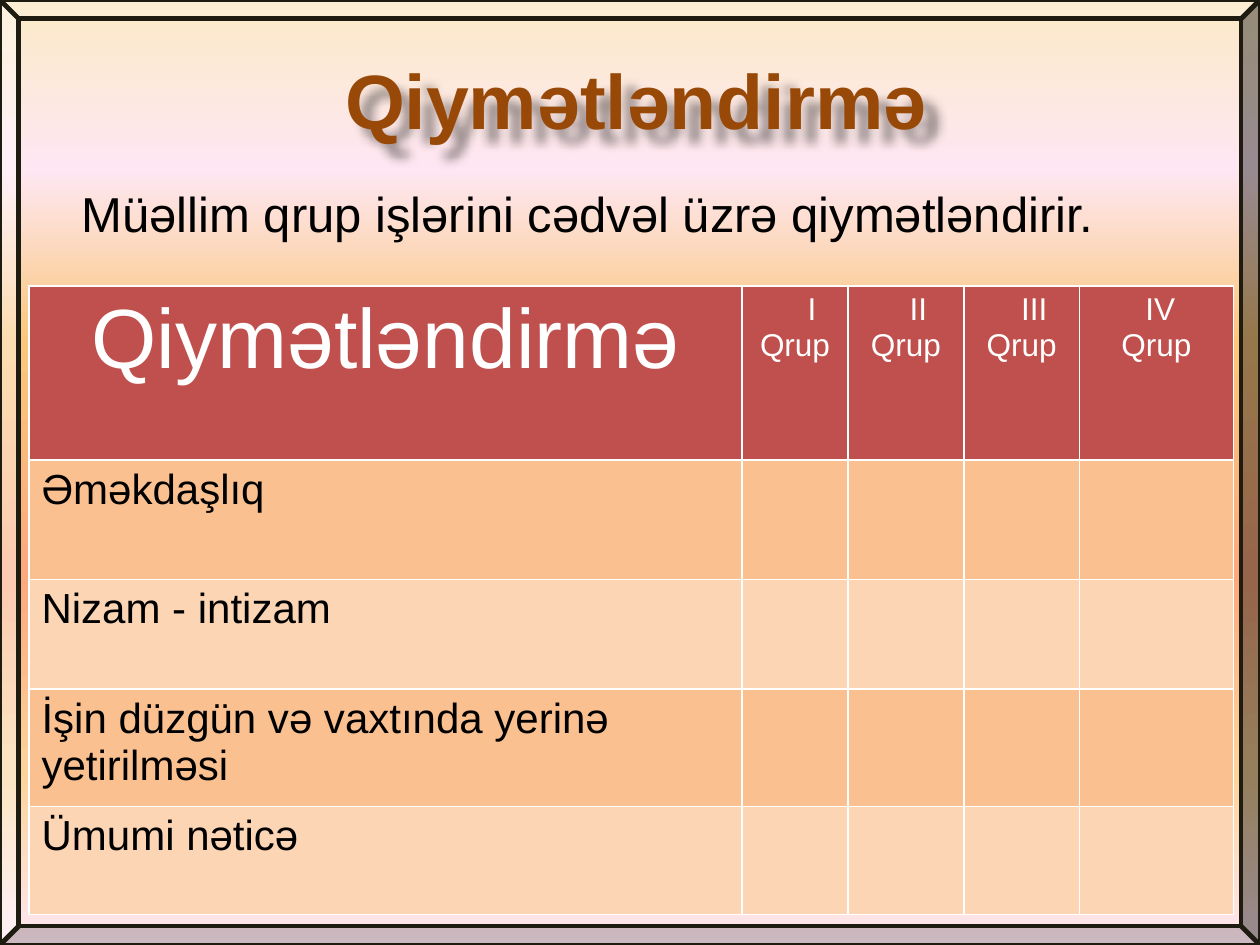
import pptx
import pptx.dml.color
import pptx.enum.shapes
import pptx.enum.text
import pptx.oxml
import pptx.oxml.ns
import pptx.util
from dataclasses import dataclass
from typing import Any

Inches = pptx.util.Inches
Pt = pptx.util.Pt
ALIGN = pptx.enum.text.PP_ALIGN
ANCHOR = pptx.enum.text.MSO_ANCHOR
NS = pptx.oxml.ns.nsdecls("a")

SUNSET = [(0, "FBEAC7"), (18, "FEE7F2"), (36, "FAC77D"),
          (61, "FBA97D"), (82, "FBD49C"), (100, "FEE7F2")]
BLACK, WHITE, BROWN = "000000", "FFFFFF", "984807"
HEADER_RED, ORANGE, PEACH = "C0504D", "FAC090", "FCD5B5"


@dataclass
class Group:
    numeral: str
    width: float
    indent: float


@dataclass
class Criterion:
    label: str
    height: float


GROUPS = [Group("I", 0.84, 0.27), Group("II", 0.92, 0.2),
          Group("III", 0.92, 0.2), Group("IV", 1.22, 0.06)]
CRITERIA = [Criterion("Əməkdaşlıq", 0.95), Criterion("Nizam - intizam", 0.87),
            Criterion("İşin düzgün və vaxtında yerinə yetirilməsi", 0.93),
            Criterion("Ümumi nəticə", 0.86)]


def rgb(value: str) -> pptx.dml.color.RGBColor:
    return pptx.dml.color.RGBColor.from_string(value)


def apply_format(target: Any, values: dict[str, Any]) -> None:
    for name, value in values.items():
        setattr(target, name, value)


def write(frame: Any, text: str, size: int, color: str,
          align: Any = ALIGN.LEFT, bold: bool = False) -> Any:
    paragraph = frame.paragraphs[0]
    paragraph.text = text
    paragraph.alignment = align
    for run in paragraph.runs:
        apply_format(run.font, {"name": "Arial", "size": Pt(size), "bold": bold})
        run.font.color.rgb = rgb(color)
    return paragraph


def sunset_gradient() -> Any:
    stops = "".join(f'<a:gs pos="{place * 1000}"><a:srgbClr val="{color}"/></a:gs>'
                    for place, color in SUNSET)
    return pptx.oxml.parse_xml(
        f'<a:gradFill {NS} rotWithShape="1"><a:gsLst>{stops}</a:gsLst>'
        '<a:lin ang="5400000" scaled="0"/></a:gradFill>')


def paint_background(slide: Any) -> None:
    slide.background.fill.solid()
    properties = slide.background.fill._xPr
    properties.replace(properties[0], sunset_gradient())


def add_frame(slide: Any) -> None:
    frame = slide.shapes.add_shape(pptx.enum.shapes.MSO_SHAPE.BEVEL,
                                   0, 0, Inches(10), Inches(7.5))
    frame.adjustments[0] = 0.02
    frame.shadow.inherit = False
    frame.fill.solid()
    properties = frame.fill._xPr
    properties.replace(properties.find(pptx.oxml.ns.qn("a:solidFill")),
                       sunset_gradient())
    frame.line.color.rgb = rgb("1E1C11")
    frame.line.width = Pt(2.75)


def add_text(slide: Any, box: tuple[float, float, float, float], text: str,
             size: int, color: str, anchor: Any = ANCHOR.TOP, **style: Any) -> Any:
    shape = slide.shapes.add_textbox(*(Inches(length) for length in box))
    apply_format(shape.text_frame, {"word_wrap": True, "vertical_anchor": anchor})
    write(shape.text_frame, text, size, color, **style)
    return shape


def add_soft_shadow(shape: Any) -> None:
    shape._element.spPr.append(pptx.oxml.parse_xml(
        f'<a:effectLst {NS}><a:outerShdw blurRad="76200" dist="127000" dir="2700000" '
        f'algn="tl" rotWithShape="0"><a:srgbClr val="{BLACK}"><a:alpha val="40000"/>'
        '</a:srgbClr></a:outerShdw></a:effectLst>'))


def style_cell(cell: Any, color: str) -> None:
    cell.fill.solid()
    cell.fill.fore_color.rgb = rgb(color)
    properties = cell._tc.get_or_add_tcPr()
    for position, side in enumerate("LRTB"):
        properties.insert(position, pptx.oxml.parse_xml(
            f'<a:ln{side} {NS} w="12700"><a:solidFill><a:srgbClr val="{WHITE}"/>'
            f'</a:solidFill></a:ln{side}>'))


def add_score_table(slide: Any) -> None:
    widths = [5.66] + [group.width for group in GROUPS]
    heights = [1.38] + [criterion.height for criterion in CRITERIA]
    scores = slide.shapes.add_table(
        len(heights), len(widths), Inches(0.23), Inches(2.27),
        Inches(sum(widths)), Inches(sum(heights))).table
    for column, width in zip(scores.columns, widths):
        column.width = Inches(width)
    for index, (row, height) in enumerate(zip(scores.rows, heights)):
        row.height = Inches(height)
        color = HEADER_RED if index == 0 else ORANGE if index % 2 else PEACH
        for cell in row.cells:
            style_cell(cell, color)

    write(scores.cell(0, 0).text_frame, "Qiymətləndirmə", 48, WHITE, ALIGN.CENTER)
    for index, group in enumerate(GROUPS, 1):
        heading = write(scores.cell(0, index).text_frame, f"{group.numeral}\vQrup",
                        18, WHITE, ALIGN.CENTER)
        properties = heading._p.get_or_add_pPr()
        properties.set("marL", "0")
        properties.set("indent", str(Inches(group.indent)))
    for index, criterion in enumerate(CRITERIA, 1):
        write(scores.cell(index, 0).text_frame, criterion.label, 24, BLACK)


def main() -> None:
    deck = pptx.Presentation()
    apply_format(deck, {"slide_width": Inches(10), "slide_height": Inches(7.5)})
    slide = deck.slides.add_slide(deck.slide_layouts[6])
    paint_background(slide)
    add_frame(slide)
    title = add_text(slide, (0.55, 0.16, 9, 1.25), "Qiymətləndirmə", 44, BROWN,
                     ANCHOR.MIDDLE, align=ALIGN.CENTER, bold=True)
    add_soft_shadow(title)
    add_text(slide, (0.55, 1.41, 8.98, 0.57),
             "Müəllim qrup işlərini cədvəl üzrə qiymətləndirir.", 28, BLACK)
    add_score_table(slide)
    deck.save("out.pptx")


if __name__ == "__main__":
    main()
